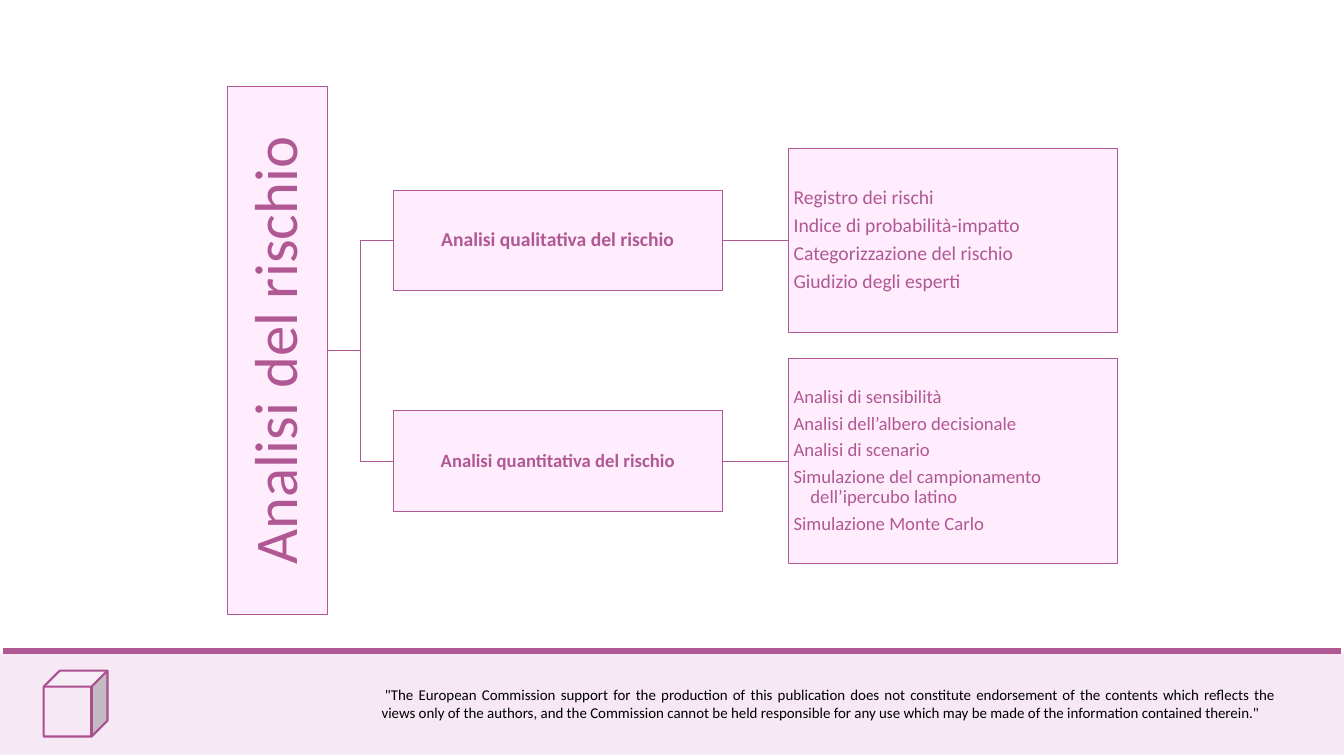
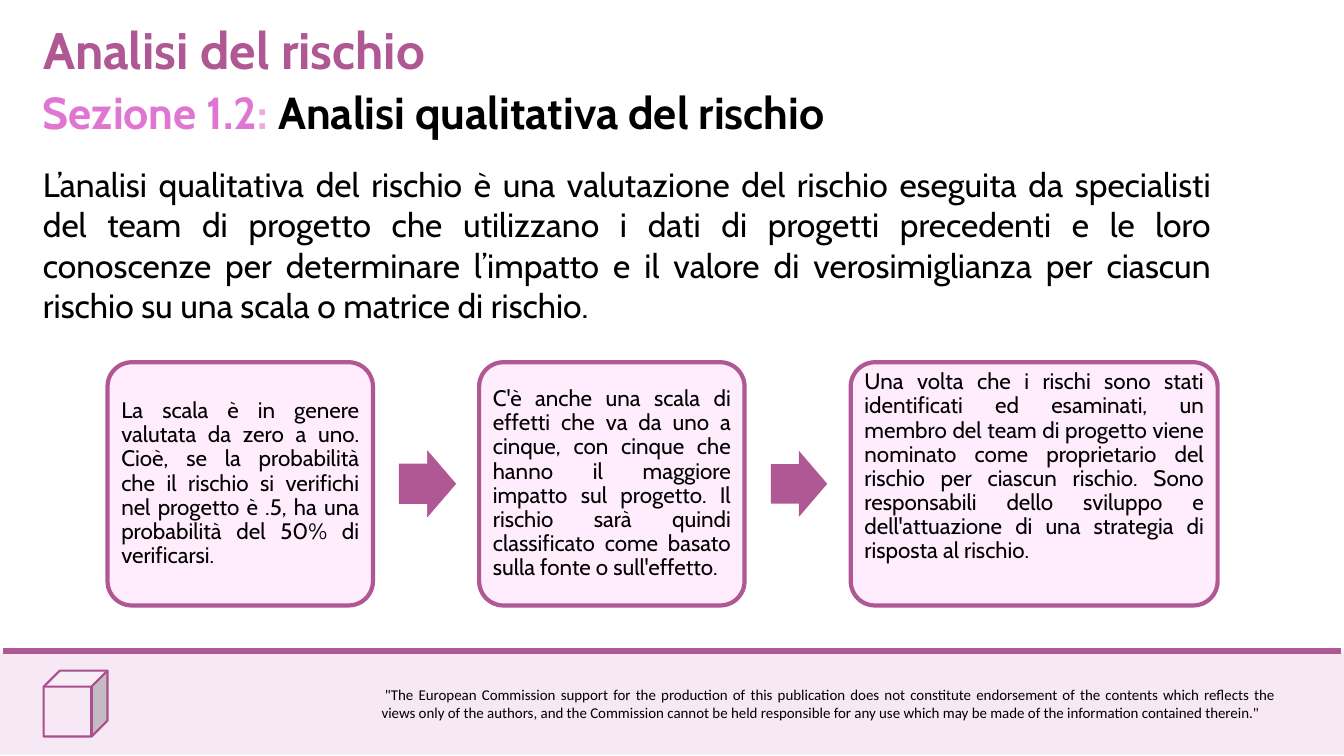
from dataclasses import dataclass
from typing import NamedTuple, Optional

from pptx import Presentation
from pptx.dml.color import RGBColor
from pptx.enum.shapes import MSO_CONNECTOR, MSO_SHAPE
from pptx.enum.text import MSO_ANCHOR, MSO_AUTO_SIZE, PP_ALIGN
from pptx.oxml.ns import qn
from pptx.util import Inches, Pt

COLORS = {
    "plum": "B05894",
    "icon": "AB4E8E",
    "blush": "FFECFC",
    "band": "F6E9F5",
    "orchid": "E076D1",
    "pale_orchid": "ECAAE3",
    "black": "000000",
}
TITLE = "Analisi del rischio"
DISCLAIMER = (
    '"The European Commission support for the production of this publication does not '
    "constitute endorsement of the contents which reflects the views only of the authors, "
    "and the Commission cannot be held responsible for any use which may be made of the "
    'information contained therein."'
)


class Area(NamedTuple):
    left: float
    top: float
    width: float
    height: float

    def lengths(self) -> list:
        return [Inches(value) for value in self]


class Span(NamedTuple):
    text: str
    color: str = "black"


@dataclass
class TextStyle:
    size: float
    font: str = "Cabin"
    bold: bool = False
    align: PP_ALIGN = PP_ALIGN.LEFT
    line_spacing: float = 1.0
    gap_after: float = 0  # share of the text size
    hanging: float = 0  # inches


@dataclass
class Branch:
    label: str
    label_size: float
    center: float
    details: list
    details_height: float
    details_size: float
    hanging: float = 0


@dataclass
class Card:
    text: str
    width: float
    bottom_inset: float = 0.1
    arrow_line: Optional[float] = None


BRANCHES = [
    Branch(
        "Analisi qualitativa del rischio", 21, 3.58,
        ["Registro dei rischi", "Indice di probabilità-impatto",
         "Categorizzazione del rischio", "Giudizio degli esperti"],
        2.75, 21,
    ),
    Branch(
        "Analisi quantitativa del rischio", 20, 6.86,
        ["Analisi di sensibilità", "Analisi dell’albero decisionale", "Analisi di scenario",
         "Simulazione del campionamento dell’ipercubo latino", "Simulazione Monte Carlo"],
        3.04, 20, hanging=0.25,
    ),
]

CARDS = [
    Card(
        "La scala è in genere valutata da zero a uno. Cioè, se la probabilità che il rischio "
        "si verifichi nel progetto è .5, ha una probabilità del 50% di verificarsi.",
        3.95, arrow_line=0.75,
    ),
    Card(
        "C'è anche una scala di effetti che va da uno a cinque, con cinque che hanno il "
        "maggiore impatto sul progetto. Il rischio sarà quindi classificato come basato "
        "sulla fonte o sull'effetto.",
        3.95,
    ),
    Card(
        "Una volta che i rischi sono stati identificati ed esaminati, un membro del team di "
        "progetto viene nominato come proprietario del rischio per ciascun rischio. Sono "
        "responsabili dello sviluppo e dell'attuazione di una strategia di risposta al rischio.",
        5.46, bottom_inset=0.6,
    ),
]


# Shared drawing functions
def rgb(name: str) -> RGBColor:
    return RGBColor.from_string(COLORS[name])


def write(box, paragraphs: list, style: TextStyle, anchor=MSO_ANCHOR.TOP,
          insets: tuple = (0.1, 0.05, 0.1, 0.05)) -> None:
    """Fill a box with paragraphs, each a list of spans; insets run left, top, right, bottom."""
    frame = box.text_frame
    frame.word_wrap = True
    frame.auto_size = MSO_AUTO_SIZE.NONE
    frame.vertical_anchor = anchor
    (frame.margin_left, frame.margin_top,
     frame.margin_right, frame.margin_bottom) = [Inches(inset) for inset in insets]
    for index, spans in enumerate(paragraphs):
        para = frame.paragraphs[0] if index == 0 else frame.add_paragraph()
        para.alignment = style.align
        para.line_spacing = style.line_spacing
        para.space_before = Pt(0)
        para.space_after = Pt(style.size * style.gap_after)
        if style.hanging:
            properties = para._p.get_or_add_pPr()
            properties.set("marL", str(max(0, Inches(style.hanging))))
            properties.set("indent", str(-Inches(style.hanging)))
        for span in spans:
            run = para.add_run()
            run.text = span.text
            run.font.name = style.font
            run.font.size = Pt(style.size)
            run.font.bold = style.bold
            run.font.color.rgb = rgb(span.color)


def paint(shape, fill: str, line: Optional[str] = None, width: float = 1) -> None:
    shape.fill.solid()
    shape.fill.fore_color.rgb = rgb(fill)
    if line:
        shape.line.color.rgb = rgb(line)
        shape.line.width = Pt(width)
    else:
        shape.line.fill.background()


def add_box(page, kind: MSO_SHAPE, area: Area, fill: str,
            line: Optional[str] = None, width: float = 1):
    box = page.shapes.add_shape(kind, *area.lengths())
    box.shadow.inherit = False
    paint(box, fill, line, width)
    return box


def add_text(page, area: Area, spans: list, style: TextStyle):
    box = page.shapes.add_textbox(*area.lengths())
    write(box, [spans], style)
    return box


def add_line(page, kind: MSO_CONNECTOR, start: tuple, end: tuple, width: float = 1):
    line = page.shapes.add_connector(kind, *[Inches(value) for value in (*start, *end)])
    line.line.color.rgb = rgb("plum")
    line.line.width = Pt(width)
    properties = line._element.spPr
    properties.append(properties.makeelement(qn("a:effectLst"), {}))
    return line


def place_title(page, area: Area):
    title = page.shapes.title
    title.left, title.top, title.width, title.height = area.lengths()
    return title


def add_footer(deck, page) -> None:
    """Draw the footer and hand it to the slide master, so that every page shows it."""
    parts = [
        add_box(page, MSO_SHAPE.RECTANGLE, Area(0, 9.72, 20, 1.51), "band"),
        add_line(page, MSO_CONNECTOR.STRAIGHT, (0.05, 9.69), (19.95, 9.69), 6.75),
        add_box(page, MSO_SHAPE.CUBE, Area(0.65, 9.98, 0.95, 0.98), "band", "icon", 2.25),
        add_text(page, Area(5.58, 10.15, 13.5, 0.64), [Span(DISCLAIMER)],
                 TextStyle(16, "Calibri", align=PP_ALIGN.JUSTIFY, hanging=-0.05)),
    ]
    for part in parts:
        deck.slide_master.shapes.element.append(part._element)


# Page 1: tree of the analysis methods
def build_tree(page) -> None:
    root_right, root_middle = 4.87, 5.22
    branch_left, details_left = 5.85, 11.73
    box_width, branch_height = 4.9, 1.49

    title = place_title(page, Area(0.2, 4.47, 7.86, 1.49))
    title.rotation = 270
    paint(title, "blush", "plum")
    write(title, [[Span(TITLE, "plum")]],
          TextStyle(65, "Calibri", align=PP_ALIGN.CENTER, line_spacing=0.9),
          MSO_ANCHOR.MIDDLE, (0.05,) * 4)

    for branch in BRANCHES:
        label = add_box(
            page, MSO_SHAPE.RECTANGLE,
            Area(branch_left, branch.center - branch_height / 2, box_width, branch_height),
            "blush", "plum")
        write(label, [[Span(branch.label, "plum")]],
              TextStyle(branch.label_size, "Calibri", True, PP_ALIGN.CENTER, 0.9),
              MSO_ANCHOR.MIDDLE, (0.01,) * 4)

        details = add_box(
            page, MSO_SHAPE.RECTANGLE,
            Area(details_left, branch.center - branch.details_height / 2,
                 box_width, branch.details_height),
            "blush", "plum")
        write(details, [[Span(detail, "plum")] for detail in branch.details],
              TextStyle(branch.details_size, "Calibri", line_spacing=0.9, gap_after=0.35,
                        hanging=branch.hanging),
              MSO_ANCHOR.MIDDLE, (0.08, 0.01, 0.01, 0.01))

        elbow = add_line(page, MSO_CONNECTOR.ELBOW, (root_right, root_middle),
                         (branch_left, branch.center))
        elbow.end_connect(label, 1)
        link = add_line(page, MSO_CONNECTOR.STRAIGHT,
                        (branch_left + box_width, branch.center),
                        (details_left, branch.center))
        link.begin_connect(label, 3)
        link.end_connect(details, 1)


# Page 2: qualitative analysis in three steps
def build_steps(page) -> None:
    title = place_title(page, Area(0.54, 0.22, 10.46, 1.03))
    write(title, [[Span(TITLE, "plum")]], TextStyle(55, bold=True))
    add_text(page, Area(0.54, 1.21, 14.87, 0.91),
             [Span("Sezione 1.2", "orchid"), Span(": ", "pale_orchid"),
              Span("Analisi qualitativa del rischio")],
             TextStyle(48, bold=True))
    add_text(page, Area(0.54, 2.39, 17.58, 2.52),
             [Span("L’analisi qualitativa del rischio è una valutazione del rischio eseguita da "
                   "specialisti del team di progetto che utilizzano i dati di progetti precedenti "
                   "e le loro conoscenze per determinare l’impatto e il valore di verosimiglianza "
                   "per ciascun rischio su una scala o matrice di rischio.")],
             TextStyle(36, align=PP_ALIGN.JUSTIFY))

    card_style = TextStyle(24, align=PP_ALIGN.JUSTIFY, line_spacing=0.9)
    left, gap = 1.6, 1.58
    for index, card in enumerate(CARDS):
        box = add_box(page, MSO_SHAPE.ROUNDED_RECTANGLE, Area(left, 5.39, card.width, 3.62),
                      "blush", "plum", 4.5)
        box.adjustments[0] = 0.1
        write(box, [[Span(card.text)]], card_style, MSO_ANCHOR.MIDDLE,
              (0.1, 0.1, 0.1, card.bottom_inset))
        if index < len(CARDS) - 1:
            arrow = add_box(page, MSO_SHAPE.RIGHT_ARROW,
                            Area(left + card.width + 0.39, 6.71, 0.84, 0.98), "plum",
                            "plum" if card.arrow_line else None, card.arrow_line or 0)
            arrow.adjustments[0], arrow.adjustments[1] = 0.6, 0.5
        left += card.width + gap


def main() -> None:
    deck = Presentation()
    deck.slide_width, deck.slide_height = Inches(20), Inches(11.25)
    title_only = deck.slide_layouts[5]
    pages = [deck.slides.add_slide(title_only) for _ in range(2)]
    add_footer(deck, pages[0])
    build_tree(pages[0])
    build_steps(pages[1])
    deck.save("out.pptx")


if __name__ == "__main__":
    main()
